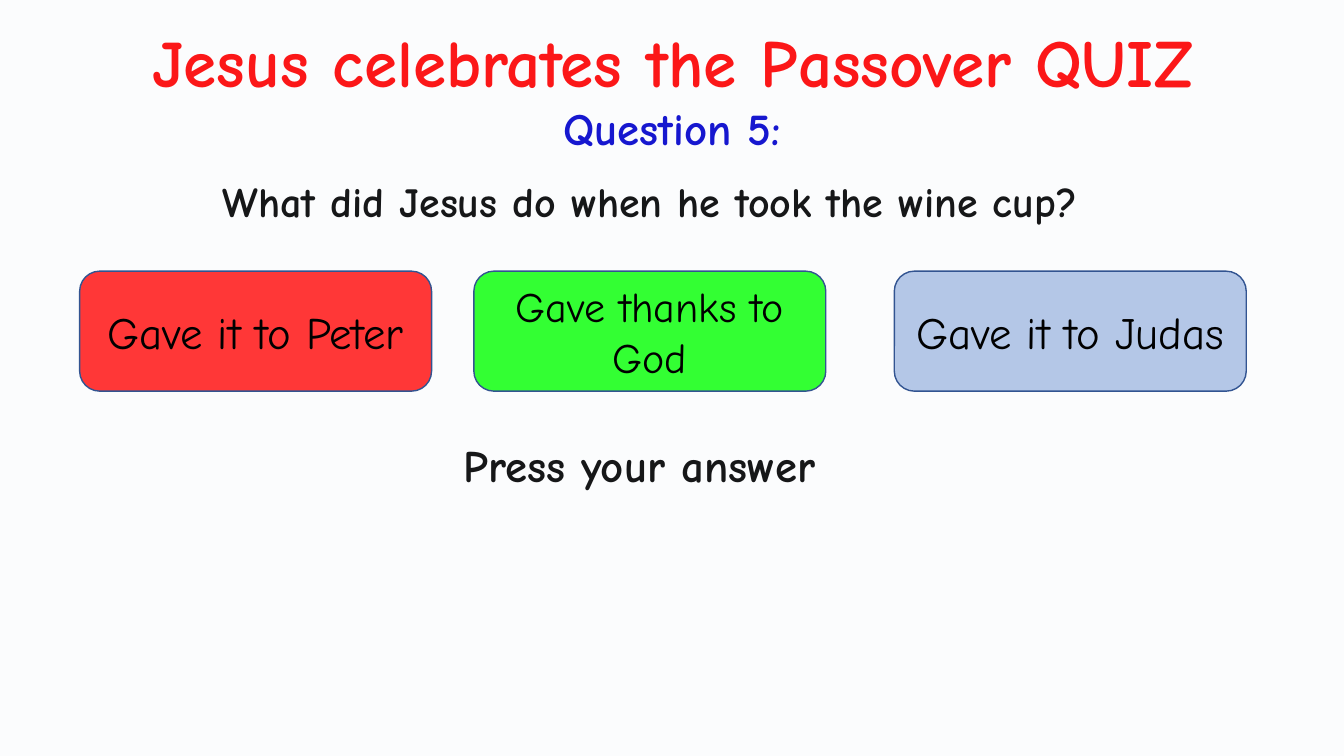
import pptx
import pptx.util
import pptx.dml.color
import pptx.enum.shapes
import pptx.enum.text
import pptx.oxml.ns
import lxml.etree

WIDE, HIGH = 13.33, 7.5
FONT = "Comic Neue"
EDGE = "325491"
SHAPE = pptx.enum.shapes.MSO_SHAPE
ALIGN = pptx.enum.text.PP_ALIGN
ANCHOR = pptx.enum.text.MSO_ANCHOR


def color(code):
    """Turn a hex string into a colour."""
    return pptx.dml.color.RGBColor.from_string(code)


def inches(box):
    """Turn a box of numbers into lengths."""
    return [pptx.util.Inches(size) for size in box]


def write(shape, text, size, ink="000000", bold=True, align=ALIGN.CENTER, anchor=ANCHOR.TOP):
    """Put one styled paragraph in a shape and return it."""
    frame = shape.text_frame
    frame.word_wrap = True
    frame.vertical_anchor = anchor
    frame.text = text
    para = frame.paragraphs[0]
    para.alignment = align
    para.font.name = FONT
    para.font.size = pptx.util.Pt(size)
    para.font.bold = bold
    para.font.color.rgb = color(ink)
    return para


def block(slide, kind, box, fill):
    """Draw a filled shape with a thin blue edge."""
    shape = slide.shapes.add_shape(kind, *inches(box))
    shape.shadow.inherit = False
    shape.fill.solid()
    shape.fill.fore_color.rgb = color(fill)
    shape.line.color.rgb = color(EDGE)
    shape.line.width = pptx.util.Pt(1)
    return shape


def heading(slide, box):
    """Place the quiz title."""
    title = slide.shapes.title
    title.left, title.top, title.width, title.height = inches(box)
    write(title, "Jesus celebrates the Passover QUIZ", 48, "FF0000")


def label(slide, box, text, size, **style):
    """Add a line of text in a box and return its paragraph."""
    return write(slide.shapes.add_textbox(*inches(box)), text, size, **style)


def prompts(slide):
    """Place the question, the hint and the question number."""
    ask = label(slide, (0.74, 1.64, 11.42, 1.19), "What did Jesus do when he took the wine cup?", 30)
    ask.line_spacing = pptx.util.Pt(40)
    ask.space_before = pptx.util.Pt(10)
    hint = label(slide, (4.5, 4.35, 6.73, 0.72), "Press your answer", 32, align=ALIGN.LEFT)
    hint.line_spacing = 0.9
    hint.space_before = pptx.util.Pt(7.5)
    label(slide, (4.46, 0.95, 4.41, 0.64), "Question 5:", 32, ink="0000CC")


def veil(slide, box):
    """Lay a pale, nearly clear sheet over the slide."""
    sheet = block(slide, SHAPE.RECTANGLE, box, "DAE3F3")
    tint = sheet.fill._xPr.find(".//" + pptx.oxml.ns.qn("a:srgbClr"))
    lxml.etree.SubElement(tint, pptx.oxml.ns.qn("a:alpha"), val="10000")


def answers(slide, top, wide, high):
    """Place the row of answer buttons."""
    for left, text, size, fill in (
        (0.79, "Gave it to Peter", 32, "FF3737"),
        (4.7, "Gave thanks to God", 30, "33FF33"),
        (8.87, "Gave it to Judas", 32, "B4C7E7"),
    ):
        button = block(slide, SHAPE.ROUNDED_RECTANGLE, (left, top, wide, high), fill)
        write(button, text, size, bold=False, anchor=ANCHOR.MIDDLE)


def main():
    """Build and save the quiz slide."""
    deck = pptx.Presentation()
    deck.slide_width, deck.slide_height = inches((WIDE, HIGH))
    slide = deck.slides.add_slide(deck.slide_layouts[5])
    heading(slide, (0.48, 0.15, 12.38, 0.91))
    prompts(slide)
    veil(slide, (-0.21, -0.82, 14.19, 8.73))
    answers(slide, 2.69, 3.49, 1.19)
    deck.save("out.pptx")


if __name__ == "__main__":
    main()
